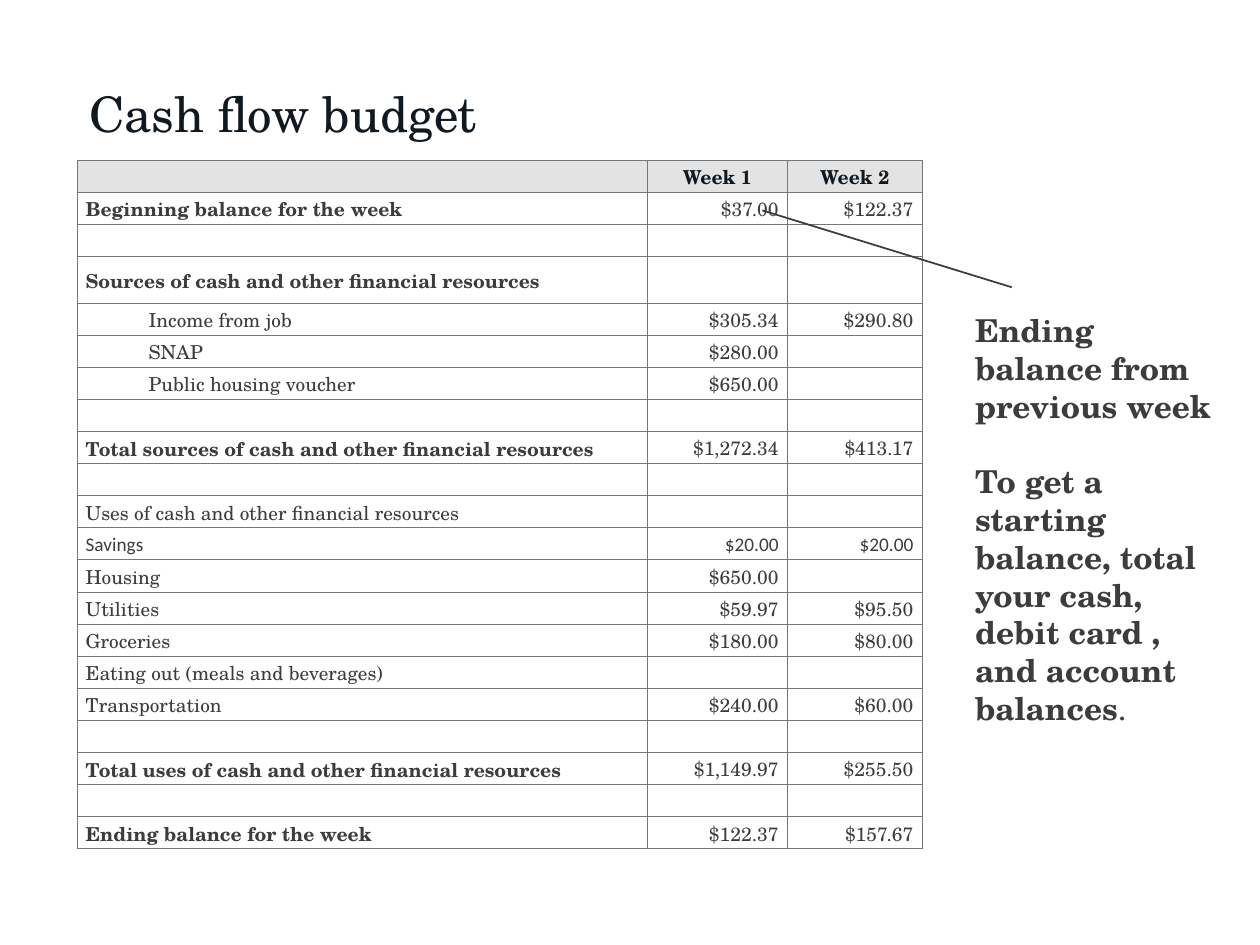
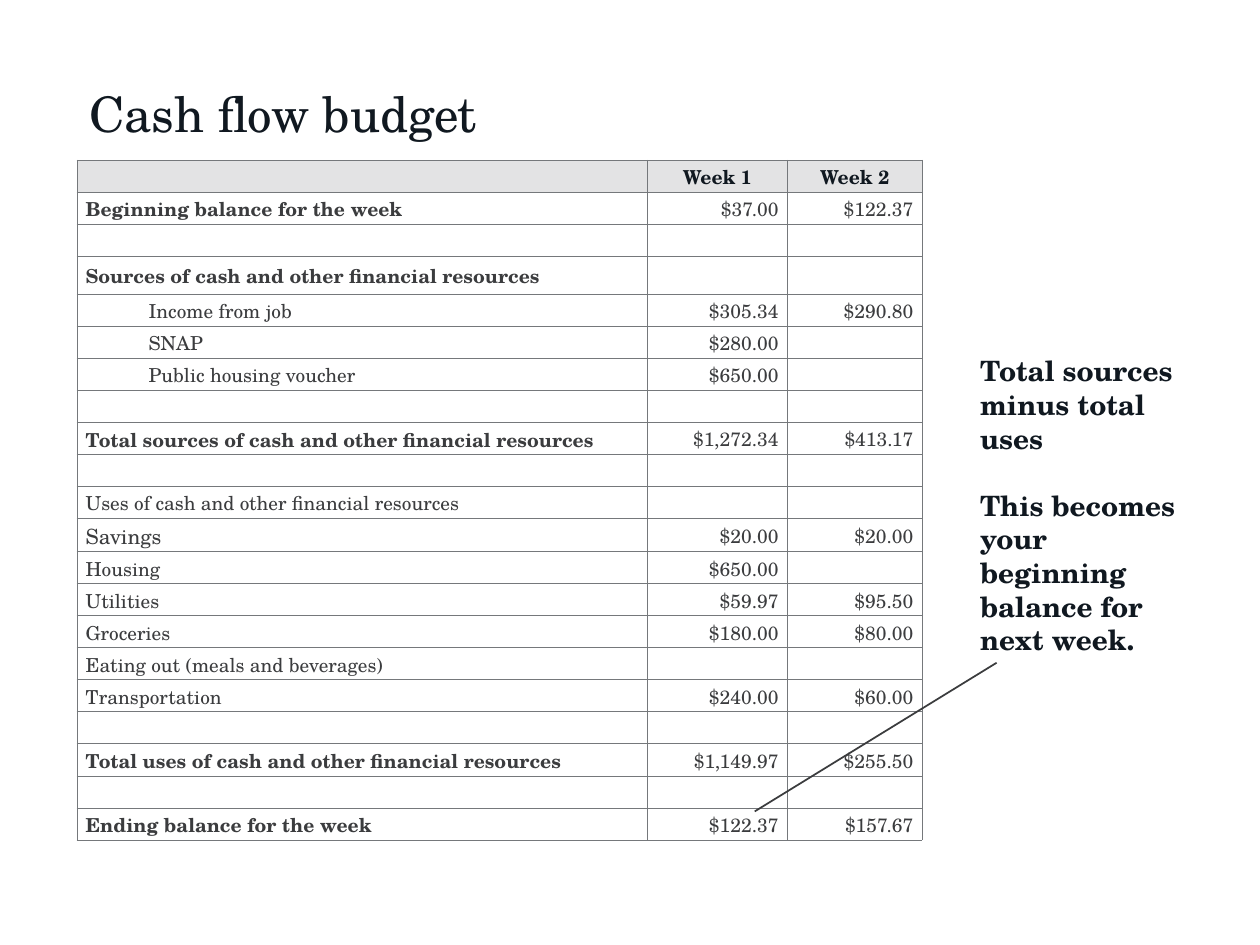
from lxml import etree
from pptx import Presentation
from pptx.dml.color import RGBColor
from pptx.enum.shapes import MSO_CONNECTOR
from pptx.enum.text import MSO_ANCHOR, MSO_AUTO_SIZE, PP_ALIGN
from pptx.oxml.ns import qn
from pptx.util import Inches, Pt

STRAIGHT = MSO_CONNECTOR.STRAIGHT
MIDDLE = MSO_ANCHOR.MIDDLE
GROW = MSO_AUTO_SIZE.SHAPE_TO_FIT_TEXT
LEFT, CENTER, RIGHT = PP_ALIGN.LEFT, PP_ALIGN.CENTER, PP_ALIGN.RIGHT

COLORS = {"ink": "101820", "gray": "3B3C3E", "border": "75787B", "header": "E3E3E4"}
FONT = "TeX Gyre Schola"
COLUMN_WIDTHS = [4.53, 1.11, 1.07]
SECTION_ROW = 3
INDENTED = ["Income from job", "SNAP", "Public housing voucher"]
BOLD_STARTS = ("Beginning", "Sources", "Total", "Ending")

BUDGET = [
    ("", "Week 1", "Week 2"),
    ("Beginning balance for the week", "$37.00", "$122.37"),
    ("", "", ""),
    ("Sources of cash and other financial resources", "", ""),
    ("Income from job", "$305.34", "$290.80"),
    ("SNAP", "$280.00", ""),
    ("Public housing voucher", "$650.00", ""),
    ("", "", ""),
    ("Total sources of cash and other financial resources", "$1,272.34", "$413.17"),
    ("", "", ""),
    ("Uses of cash and other financial resources", "", ""),
    ("Savings", "$20.00", "$20.00"),
    ("Housing", "$650.00", ""),
    ("Utilities", "$59.97", "$95.50"),
    ("Groceries", "$180.00", "$80.00"),
    ("Eating out (meals and beverages)", "", ""),
    ("Transportation", "$240.00", "$60.00"),
    ("", "", ""),
    ("Total uses of cash and other financial resources", "$1,149.97", "$255.50"),
    ("", "", ""),
    ("Ending balance for the week", "$122.37", "$157.67"),
]

PAGES = [
    {
        "table_height": 5.47, "section_height": 0.37,
        "savings_font": "Calibri", "savings_size": 11,
        "note_at": (7.64, 2.42, 2.19, 3.43), "note_size": 18, "note_color": "gray",
        "note": [
            [("Ending balance from previous week", True)],
            [("To get a starting balance, total your cash, debit card , and account balances", True),
             (".", False)],
        ],
        "pointer": (6.05, 1.67, 8.03, 2.28),
    },
    {
        "table_height": 5.39, "section_height": 0.3,
        "savings_font": FONT, "savings_size": 12,
        "note_at": (7.68, 2.76, 1.81, 2.52), "note_size": 16, "note_color": "ink",
        "note": [
            [("Total sources minus total uses", True)],
            [("This becomes your beginning balance for next week.", True)],
        ],
        "pointer": (7.91, 5.26, 5.99, 6.44),
    },
]


def style_span(span, size, color, bold=False, font=FONT):
    span.font.name = font
    span.font.size = Pt(size)
    span.font.bold = bold
    span.font.color.rgb = RGBColor.from_string(COLORS[color])


def add_borders(cell):
    properties = cell._tc.get_or_add_tcPr()
    for side in ("a:lnL", "a:lnR", "a:lnT", "a:lnB"):
        line = etree.SubElement(properties, qn(side), w=str(Pt(0.25)))
        fill = etree.SubElement(line, qn("a:solidFill"))
        etree.SubElement(fill, qn("a:srgbClr"), val=COLORS["border"])


deck = Presentation()
deck.slide_width = Inches(10)
deck.slide_height = Inches(7.5)
title_only = deck.slide_layouts[5]

for content in PAGES:
    page = deck.slides.add_slide(title_only)

    title = page.shapes.title
    title.left, title.top = Inches(0.61), Inches(0.49)
    title.width, title.height = Inches(8.79), Inches(0.81)
    title.text_frame.text = "Cash flow budget"
    title.text_frame.vertical_anchor = MIDDLE
    para = title.text_frame.paragraphs[0]
    para.alignment = LEFT
    style_span(para.runs[0], 28, "ink")

    table = page.shapes.add_table(
        len(BUDGET), len(COLUMN_WIDTHS), Inches(0.61), Inches(1.27),
        Inches(sum(COLUMN_WIDTHS)), Inches(content["table_height"])).table
    table.first_row = False
    table.horz_banding = False
    for column, width in zip(table.columns, COLUMN_WIDTHS):
        column.width = Inches(width)
    row_height = (content["table_height"] - content["section_height"]) / (len(BUDGET) - 1)

    for row_index, values in enumerate(BUDGET):
        is_header = row_index == 0
        is_section = row_index == SECTION_ROW
        table.rows[row_index].height = Inches(content["section_height"] if is_section else row_height)
        is_savings = values[0] == "Savings"
        font = content["savings_font"] if is_savings else FONT

        for column_index, value in enumerate(values):
            is_label = column_index == 0
            cell = table.cell(row_index, column_index)
            cell.margin_left = cell.margin_right = Inches(0.07)
            cell.margin_top = cell.margin_bottom = 0
            cell.vertical_anchor = MIDDLE
            add_borders(cell)
            if is_header:
                cell.fill.solid()
                cell.fill.fore_color.rgb = RGBColor.from_string(COLORS["header"])
            else:
                cell.fill.background()

            para = cell.text_frame.paragraphs[0]
            if not value:
                etree.SubElement(para._p, qn("a:endParaRPr"), sz="1100")
                continue
            para.text = value
            para.line_spacing = 1.07
            para.alignment = CENTER if is_header else LEFT if is_label else RIGHT
            if value in INDENTED:
                para._p.get_or_add_pPr().set("marL", str(Inches(0.5)))
            size = content["savings_size"] if is_savings and is_label else 11
            bold = is_header or value.startswith(BOLD_STARTS)
            style_span(para.runs[0], size, "ink" if is_header else "gray", bold, font)

    pointer = page.shapes.add_connector(STRAIGHT, *map(Inches, content["pointer"]))
    pointer.line.color.rgb = RGBColor.from_string(COLORS["gray"])
    pointer.line.width = Pt(1)
    etree.SubElement(pointer._element.spPr, qn("a:effectLst"))

    note = page.shapes.add_textbox(*map(Inches, content["note_at"])).text_frame
    note.word_wrap = True
    note.auto_size = GROW
    for index, pieces in enumerate(content["note"]):
        para = note.add_paragraph() if index else note.paragraphs[0]
        if index:
            para.space_before = Pt(content["note_size"] * 1.2)
        for text, bold in pieces:
            span = para.add_run()
            span.text = text
            style_span(span, content["note_size"], content["note_color"], bold)

deck.save("out.pptx")
